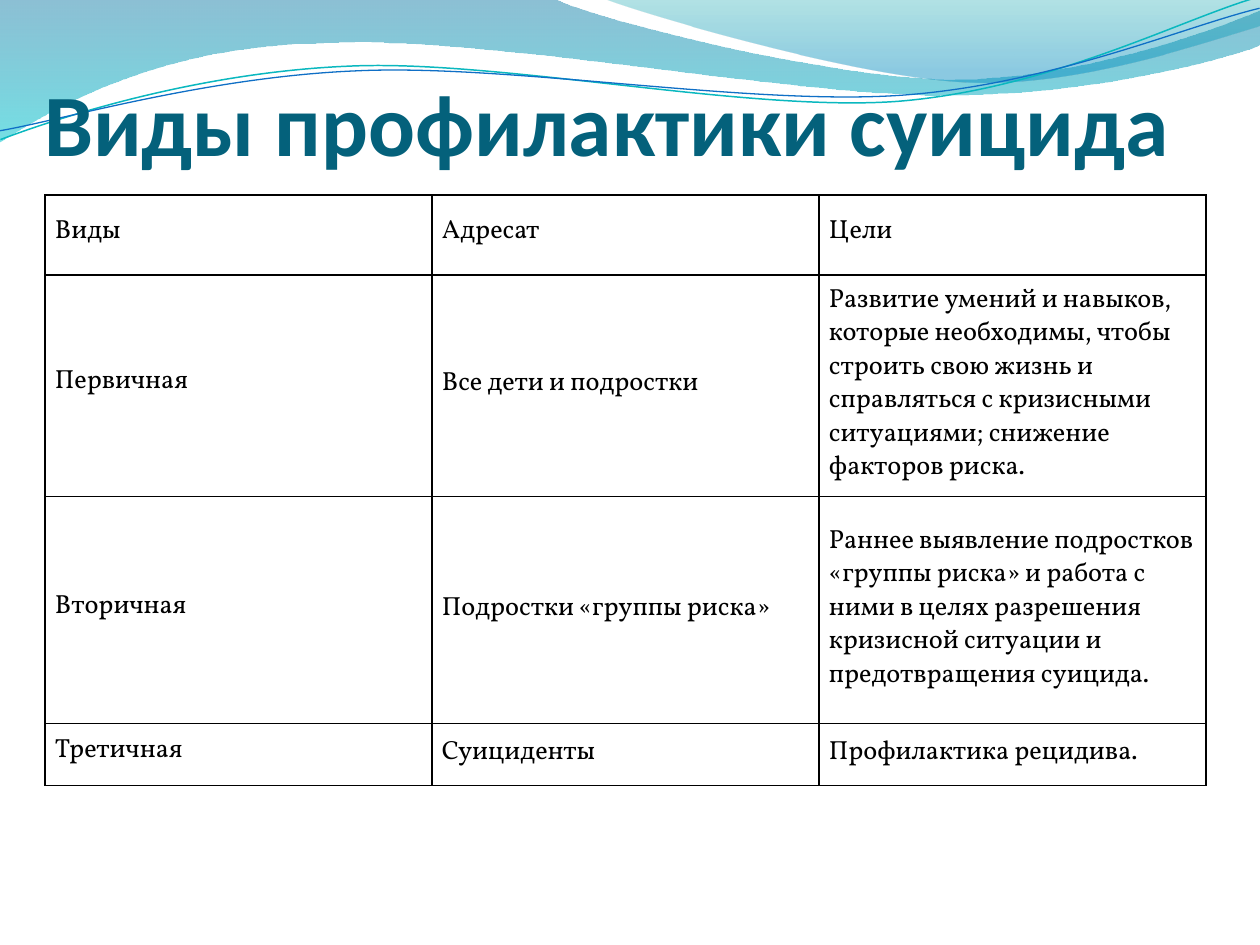
from dataclasses import dataclass

from lxml import etree
from pptx import Presentation, util as u
from pptx.dml.color import RGBColor
from pptx.enum import text
from pptx.oxml.ns import qn

SCALE = 914400 / 126


@dataclass(frozen=True)
class Theme:
    title_font: str = "Calibri"
    body_font: str = "Vollkorn"
    title_size: int = 50
    body_size: int = 15
    title_color: str = "04617B"
    ink: str = "000000"
    back_wave: tuple = ((0, "0074A1", 45), (1, "00C6CF", 55))
    front_wave: tuple = ((0, "00A1A9", 30), (0.8, "008BBF", 45))
    teal_line: str = "0AB8BF"
    blue_line: str = "0F6FC6"


THEME = Theme()
THREAD_TILT = 357.3

BACK_WAVE = [
    (0, 0), (554, -1),
    (600, 21, 837, 79, 955, 79), (1075, 79, 1207, 33, 1260, 11),
    (1261, 45),
    (1239, 55, 1096, 96, 940, 95), (784, 95, 481, 35, 324, 43),
    (163, 45, 58, 105, -1, 142),
    (0, 0),
]
FRONT_WAVE = [
    (604, -1),
    (641, 14, 859, 78, 969, 82), (1079, 87, 1211, 40, 1260, 26),
    (1260, 0), (604, -1),
]
TEAL_CURVE = [
    (-2, 110),
    (59, 90, 200, 52, 350, 53), (499, 53, 745, 118, 896, 114),
    (1049, 109, 1184, 45, 1260, 27),
]
BLUE_CURVE = [
    (-2, 101),
    (57, 94, 207, 57, 357, 58), (509, 58, 750, 112, 902, 108),
    (1052, 104, 1188, 52, 1262, 38),
]

ROWS = [
    ("Виды", "Адресат", "Цели"),
    ("Первичная", "Все дети и подростки",
     "Развитие умений и навыков, которые необходимы, чтобы строить свою жизнь и "
     "справляться с кризисными ситуациями; снижение факторов риска."),
    ("Вторичная", "Подростки «группы риска»",
     "Раннее выявление подростков «группы риска» и работа с ними в целях "
     "разрешения кризисной ситуации и предотвращения суицида."),
    ("Третичная", "Суициденты", "Профилактика рецидива."),
]
ROW_HEIGHTS = (80, 218, 227, 62)
COLUMN_WIDTH = 387


def px(length):
    return u.Emu(round(length * SCALE))


def rgb(color):
    return RGBColor.from_string(color)


def add_curve(shapes, segments, close):
    points = [(px(x), px(y)) for segment in segments
              for x, y in zip(segment[::2], segment[1::2])]
    builder = shapes.build_freeform(*points[0], scale=1.0)
    builder.add_line_segments(points[1:], close=close)
    curve = builder.convert_to_shape()
    curve.shadow.inherit = False
    steps = iter(list(curve._element.iter(qn("a:lnTo"))))
    for segment in segments[1:]:
        first = next(steps)
        if len(segment) == 6:
            first.tag = qn("a:cubicBezTo")
            for _ in range(2):
                step = next(steps)
                first.append(step[0])
                step.getparent().remove(step)
    return curve


def add_wave(shapes, segments, stops):
    wave = add_curve(shapes, segments, close=True)
    wave.line.fill.background()
    wave.fill.gradient()
    wave.fill.gradient_angle = 270
    for stop, (position, color, _) in zip(wave.fill.gradient_stops, stops):
        stop.position = position
        stop.color.rgb = rgb(color)
    colors = wave._element.spPr.iter(qn("a:srgbClr"))
    for node, (_, _, opacity) in zip(list(colors), stops):
        etree.SubElement(node, qn("a:alpha"), val=str(opacity * 1000))


def add_thread(shapes, segments, color, width):
    thread = add_curve(shapes, segments, close=False)
    thread.rotation = THREAD_TILT
    thread.fill.background()
    thread.line.color.rgb = rgb(color)
    thread.line.width = u.Pt(width)


def set_title(slide, words):
    title = slide.shapes.title
    slide.shapes._spTree.append(title._element)
    title.left, title.top, title.width, title.height = map(px, (44, 16, 1134, 158))
    frame = title.text_frame
    frame.text = words
    frame.word_wrap = True
    frame.auto_size = text.MSO_AUTO_SIZE.NONE
    frame.vertical_anchor = text.MSO_ANCHOR.BOTTOM
    frame.margin_left = frame.margin_right = frame.margin_bottom = 0
    heading = frame.paragraphs[0]
    heading.alignment = text.PP_ALIGN.LEFT
    set_font(heading.font, THEME.title_font, THEME.title_size, THEME.title_color)
    heading.font.bold = True


def set_font(font, name, size, color):
    font.name = name
    font.size = u.Pt(size)
    font.color.rgb = rgb(color)


def set_borders(cell):
    properties = cell._tc.get_or_add_tcPr()
    for position, side in enumerate(("lnL", "lnR", "lnT", "lnB")):
        border = etree.Element(qn(f"a:{side}"), w=str(u.Pt(1)))
        fill = etree.SubElement(border, qn("a:solidFill"))
        etree.SubElement(fill, qn("a:srgbClr"), val=THEME.ink)
        properties.insert(position, border)


def fill_cell(cell, words, is_label):
    cell.text = words
    cell.vertical_anchor = text.MSO_ANCHOR.MIDDLE
    cell.margin_left = cell.margin_right = px(10)
    cell.margin_top = cell.margin_bottom = px(10)
    cell.fill.background()
    entry = cell.text_frame.paragraphs[0]
    entry.line_spacing = u.Pt(16.8 if is_label else 19.2)
    entry.space_after = u.Pt(12 if is_label else 0)
    set_font(entry.font, THEME.body_font, THEME.body_size, THEME.ink)
    set_borders(cell)


def add_prevention_table(slide):
    columns = len(ROWS[0])
    table = slide.shapes.add_table(
        len(ROWS), columns, px(45), px(195),
        px(COLUMN_WIDTH * columns), px(sum(ROW_HEIGHTS))).table
    table.first_row = table.horz_banding = False
    for column in table.columns:
        column.width = px(COLUMN_WIDTH)
    for r, (height, entries) in enumerate(zip(ROW_HEIGHTS, ROWS)):
        table.rows[r].height = px(height)
        for c, words in enumerate(entries):
            fill_cell(table.cell(r, c), words, is_label=r == 0 or c == 0)


def main():
    deck = Presentation()
    deck.slide_width, deck.slide_height = px(1260), px(945)
    slide = deck.slides.add_slide(deck.slide_layouts[5])
    add_wave(slide.shapes, BACK_WAVE, THEME.back_wave)
    add_wave(slide.shapes, FRONT_WAVE, THEME.front_wave)
    threads = slide.shapes.add_group_shape().shapes
    add_thread(threads, TEAL_CURVE, THEME.teal_line, 0.85)
    add_thread(threads, BLUE_CURVE, THEME.blue_line, 0.75)
    set_title(slide, "Виды профилактики суицида")
    add_prevention_table(slide)
    deck.save("out.pptx")


if __name__ == "__main__":
    main()
